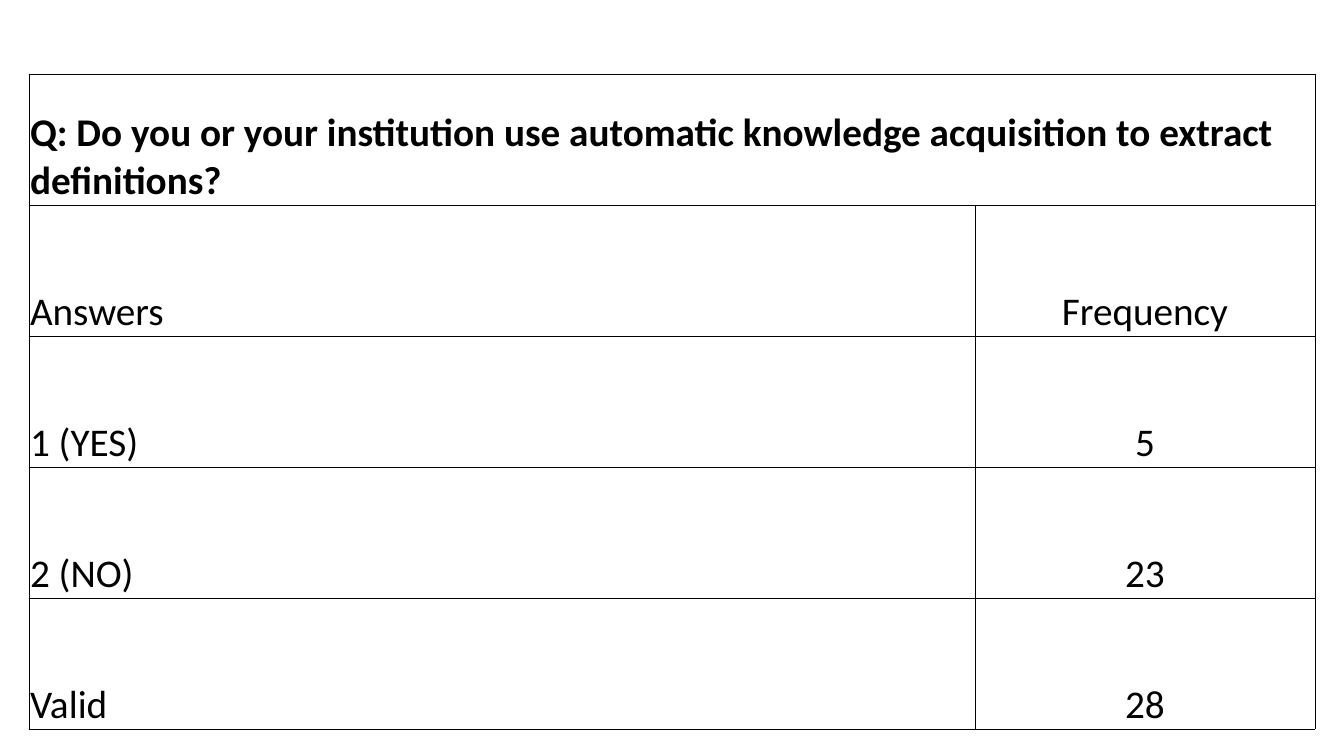
from lxml import etree
from pptx import Presentation
from pptx.dml.color import RGBColor
from pptx.enum.text import MSO_ANCHOR, PP_ALIGN
from pptx.oxml.ns import qn
from pptx.util import Pt

PX = 914400 / 100.8
BLACK = RGBColor(0x00, 0x00, 0x00)
FONT = "Calibri"
LEFT, CENTER = PP_ALIGN.LEFT, PP_ALIGN.CENTER
BOTTOM = MSO_ANCHOR.BOTTOM

QUESTION = "Q: Do you or your institution use automatic knowledge acquisition to extract definitions?"
ANSWERS = [
    ("Answers", "Frequency"),
    ("1 (YES)", "5"),
    ("2 (NO)", "23"),
    ("Valid", "28"),
]
COL_WIDTHS = (946, 340)
ROW_HEIGHT = 131


def px(n):
    return round(n * PX)


def add_borders(cell, color=BLACK, width=0.5):
    tcPr = cell._tc.get_or_add_tcPr()
    for side in ("lnL", "lnR", "lnT", "lnB"):
        ln = etree.SubElement(tcPr, qn(f"a:{side}"), w=str(Pt(width)))
        fill = etree.SubElement(ln, qn("a:solidFill"))
        etree.SubElement(fill, qn("a:srgbClr"), val=str(color))


def write(cell, text, size=28, bold=False, align=LEFT, color=BLACK):
    p = cell.text_frame.paragraphs[0]
    p.alignment = align
    r = p.add_run()
    r.text = text
    r.font.name = FONT
    r.font.size = Pt(size)
    r.font.bold = bold
    r.font.color.rgb = color


def format_cell(cell):
    cell.margin_left = cell.margin_right = cell.margin_top = px(1)
    cell.margin_bottom = 0
    cell.vertical_anchor = BOTTOM
    add_borders(cell)
    cell.fill.background()


def add_answer_table(s, x, y):
    n_rows = len(ANSWERS) + 1
    frame = s.shapes.add_table(n_rows, len(COL_WIDTHS), px(x), px(y),
                               px(sum(COL_WIDTHS)), px(ROW_HEIGHT * n_rows))
    table = frame.table
    table.first_row = False
    table.horz_banding = False
    for col, width in zip(table.columns, COL_WIDTHS):
        col.width = px(width)
    for row in table.rows:
        row.height = px(ROW_HEIGHT)
        for cell in row.cells:
            format_cell(cell)
    table.cell(0, 0).merge(table.cell(0, 1))
    write(table.cell(0, 0), QUESTION, bold=True)
    for i, (answer, frequency) in enumerate(ANSWERS, 1):
        write(table.cell(i, 0), answer)
        write(table.cell(i, 1), frequency, align=CENTER)


def main():
    prs = Presentation()
    prs.slide_width, prs.slide_height = px(1344), px(756)
    s = prs.slides.add_slide(prs.slide_layouts[6])
    add_answer_table(s, 29, 74)
    prs.save("out.pptx")


if __name__ == "__main__":
    main()
